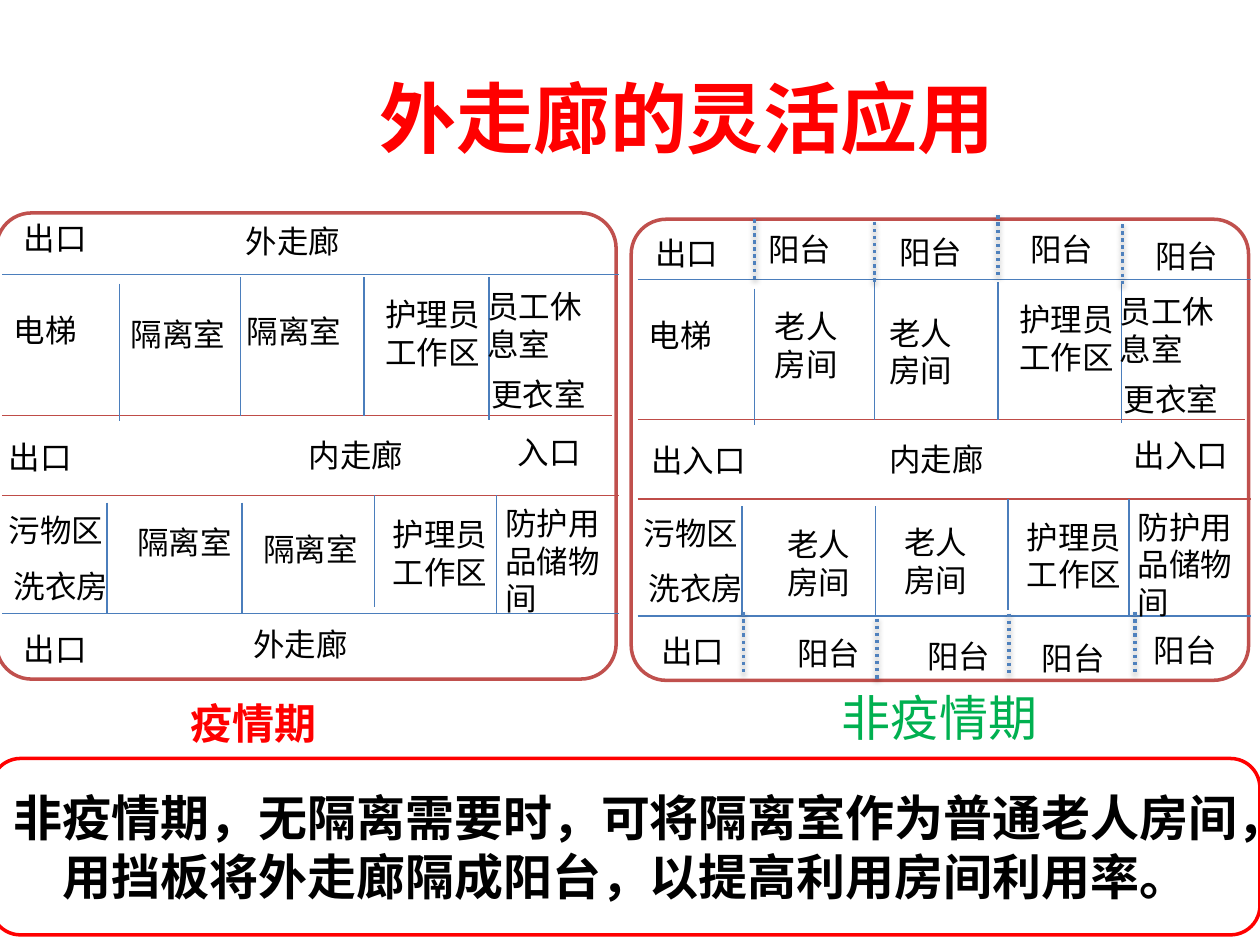
import pptx
import pptx.util
import pptx.dml.color
import pptx.enum.dml
import pptx.enum.shapes
import pptx.enum.text
import pptx.oxml
from lxml import etree

RGBColor = pptx.dml.color.RGBColor
Pt = pptx.util.Pt
PX = 9144  # 100 px to the inch

RED = RGBColor(0xFF, 0x00, 0x00)
GREEN = RGBColor(0x00, 0xB0, 0x50)
BLACK = RGBColor(0x00, 0x00, 0x00)
WHITE = RGBColor(0xFF, 0xFF, 0xFF)
FRAME = RGBColor(0xC0, 0x50, 0x4D)
CORRIDOR = RGBColor(0xBF, 0x4C, 0x48)
WALL = RGBColor(0x4B, 0x7E, 0xBC)
PARTITION = RGBColor(0x4F, 0x81, 0xBD)

A = "http://schemas.openxmlformats.org/drawingml/2006/main"
SHADOW = (f'<a:effectLst xmlns:a="{A}"><a:outerShdw blurRad="40000" dist="20000" '
          'dir="5400000" rotWithShape="0"><a:srgbClr val="000000">'
          '<a:alpha val="38000"/></a:srgbClr></a:outerShdw></a:effectLst>')

# Shared parts, in the coordinates of the left plan
LEFT, RIGHT = (-3, 169, 492, 370), (501, 174, 490, 366)
CORRIDOR_LINES = [(2, 330, 486, 330), (2, 393, 491, 393)]
WALLS = [(2, 218, 491, 218), (2, 487, 491, 487),
         (95, 225, 95, 334), (191, 220, 191, 330), (289, 220, 289, 330),
         (388, 220, 388, 333), (85, 399, 85, 487), (192, 399, 192, 487),
         (297, 393, 297, 482), (394, 393, 394, 487)]
SHARED_ROOMS = [
    ("电梯", 1, 242, 98, 40), ("护理员工作区", 296, 229, 98, 70),
    ("员工休息室", 377, 223, 112, 70), ("更衣室", 380, 293, 98, 40),
    ("污物区", -3, 401, 98, 40), ("洗衣房", 1, 445, 98, 40),
    ("护理员工作区", 302, 404, 98, 70), ("防护用品储物间", 391, 395, 98, 100)]

# Parts of one plan only, in slide coordinates
EPIDEMIC_LABELS = [
    ("隔离室", 94, 245), ("隔离室", 186, 243), ("隔离室", 99, 410), ("隔离室", 199, 416),
    ("外走廊", 185, 171), ("内走廊", 235, 341), ("外走廊", 191, 491),
    ("出口", 9, 169), ("出口", -3, 343), ("入口", 401, 339), ("出口", 9, 495)]
NORMAL_LABELS = [
    ("老人\n房间", 605, 239), ("老人\n房间", 696, 244),
    ("老人\n房间", 615, 412), ("老人\n房间", 708, 410),
    ("阳台", 600, 178), ("阳台", 704, 180), ("阳台", 808, 178), ("阳台", 907, 183),
    ("阳台", 623, 498), ("阳台", 726, 501), ("阳台", 817, 502), ("阳台", 906, 496),
    ("出口", 510, 181), ("出口", 515, 497),
    ("出入口", 507, 345), ("内走廊", 696, 344), ("出入口", 890, 341)]
PARTITIONS = [(599, 174), (694, 176), (792, 171), (891, 178),
              (590, 486), (696, 491), (801, 487), (901, 486)]


def add_label(shapes, text, x, y, w=98, h=40, size=18, color=BLACK, bold=None):
    sp = shapes.add_textbox(x * PX, y * PX, w * PX, h * PX)
    tf = sp.text_frame
    tf.word_wrap = True
    tf.auto_size = pptx.enum.text.MSO_AUTO_SIZE.SHAPE_TO_FIT_TEXT
    tf.text = text
    for p in tf.paragraphs:
        p.font.size, p.font.name, p.font.bold = Pt(size), "Arial", bold
        p.font.color.rgb = color


def add_line(shapes, x1, y1, x2, y2, color, dotted=False):
    """Thin solid wall, or a thick dotted partition with a shadow."""
    cx = shapes.add_connector(pptx.enum.shapes.MSO_CONNECTOR.STRAIGHT,
                              x1 * PX, y1 * PX, x2 * PX, y2 * PX)
    cx.line.color.rgb = color
    cx.line.width = Pt(2 if dotted else 0.75)
    spPr = cx._element.spPr
    if dotted:
        cx.line.dash_style = pptx.enum.dml.MSO_LINE.ROUND_DOT
        spPr.append(pptx.oxml.parse_xml(SHADOW))
    else:
        etree.SubElement(spPr, f"{{{A}}}effectLst")


prs = pptx.Presentation()
prs.slide_width, prs.slide_height = 1000 * PX, 750 * PX
s = prs.slides.add_slide(prs.slide_layouts[5])

title = s.shapes.title
title.left, title.top, title.width, title.height = 141 * PX, 30 * PX, 809 * PX, 125 * PX
tf = title.text_frame
tf.text = "外走廊的灵活应用"
tf.vertical_anchor = pptx.enum.text.MSO_ANCHOR.MIDDLE
p = tf.paragraphs[0]
p.alignment = pptx.enum.text.PP_ALIGN.CENTER
p.font.size, p.font.name, p.font.bold = Pt(44), "Calibri", True
p.font.color.rgb = RED

ROUNDED = pptx.enum.shapes.MSO_SHAPE.ROUNDED_RECTANGLE
note = s.shapes.add_shape(ROUNDED, -7 * PX, 602 * PX, 1007 * PX, 140 * PX)
note.shadow.inherit = False
note.fill.solid()
note.fill.fore_color.rgb = WHITE
note.line.color.rgb = RED
note.line.width = Pt(2)
tf = note.text_frame
tf.word_wrap = True
tf.text = "非疫情期，无隔离需要时，可将隔离室作为普通老人房间，用挡板将外走廊隔成阳台，以提高利用房间利用率。"
tf.vertical_anchor = pptx.enum.text.MSO_ANCHOR.MIDDLE
p = tf.paragraphs[0]
p.alignment = pptx.enum.text.PP_ALIGN.CENTER
p.font.size, p.font.name, p.font.bold = Pt(28), "Calibri", True
p.font.color.rgb = BLACK

for plan, labels, partitions in ((RIGHT, NORMAL_LABELS, PARTITIONS),
                                 (LEFT, EPIDEMIC_LABELS, [])):
    shapes = s.shapes.add_group_shape().shapes
    left, top, width, height = plan
    frame = shapes.add_shape(ROUNDED, left * PX, top * PX, width * PX, height * PX)
    frame.adjustments[0] = 0.076
    frame.shadow.inherit = False
    frame.fill.solid()
    frame.fill.fore_color.rgb = WHITE
    frame.line.color.rgb = FRAME
    frame.line.width = Pt(2)

    # Fit the shared parts from the left frame into this one
    xs = {x: round(left + (x - LEFT[0]) * width / LEFT[2]) for x in range(-3, 500)}
    ys = {y: round(top + (y - LEFT[1]) * height / LEFT[3]) for y in range(160, 550)}
    for lines, color in ((CORRIDOR_LINES, CORRIDOR), (WALLS, WALL)):
        for x1, y1, x2, y2 in lines:
            add_line(shapes, xs[x1], ys[y1], xs[x2], ys[y2], color)
    for text, x, y, w, h in SHARED_ROOMS:
        add_label(shapes, text, xs[x], ys[y], w, h)
    for x, y in partitions:
        add_line(shapes, x, y, x, y + 49, PARTITION, dotted=True)
    for text, x, y in labels:
        add_label(shapes, text, x, y, h=70 if "\n" in text else 40)

add_label(s.shapes, "非疫情期", 658, 541, 239, 57, 28, GREEN)
add_label(s.shapes, "疫情期", 141, 549, 285, 50, 24, RED, True)

prs.save("out.pptx")
